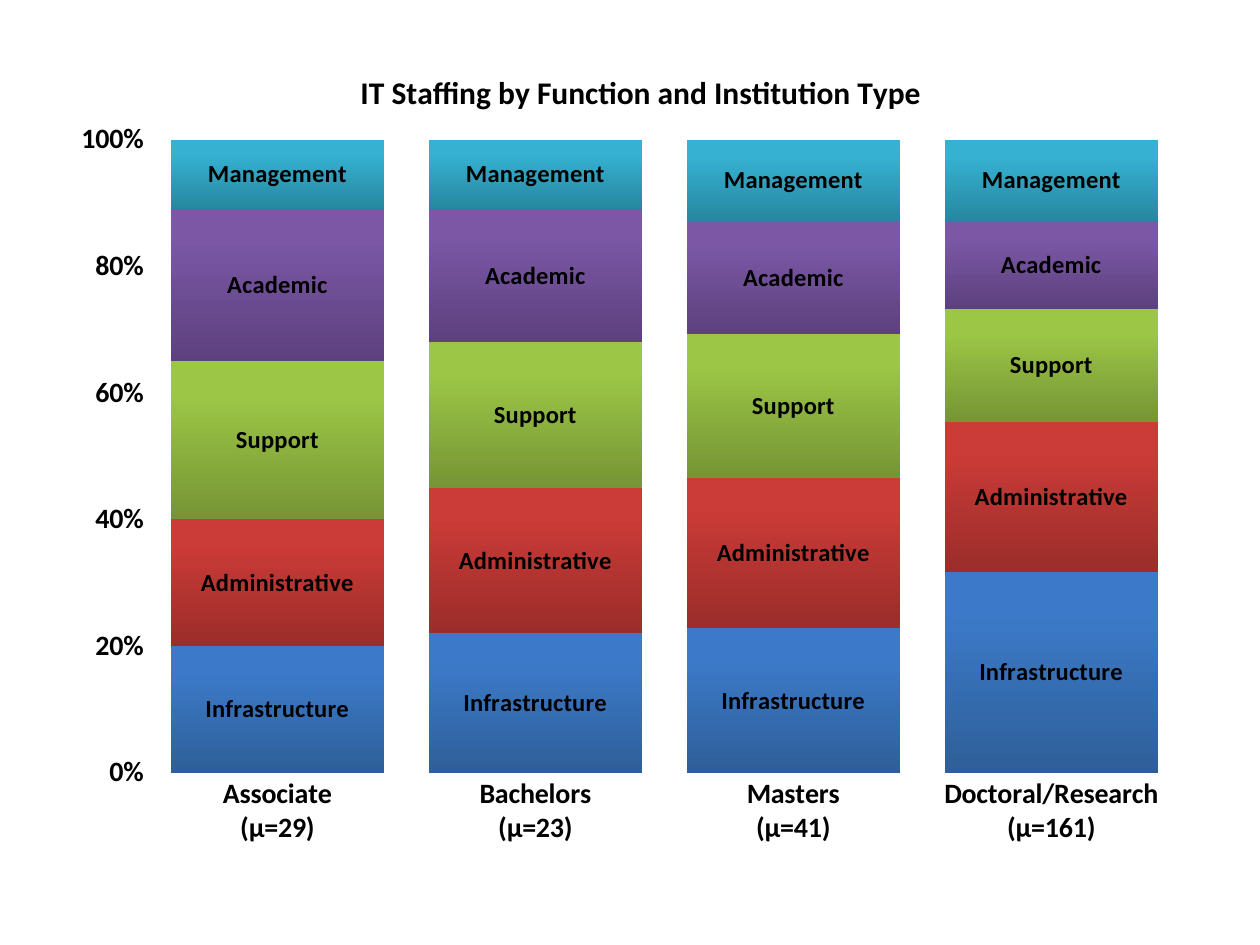
from dataclasses import dataclass

from lxml.etree import SubElement
from pptx import Presentation
from pptx.chart.data import CategoryChartData
from pptx.dml.color import RGBColor
from pptx.enum.chart import XL_CHART_TYPE, XL_LABEL_POSITION, XL_TICK_MARK
from pptx.oxml import parse_xml
from pptx.oxml.ns import nsdecls, qn
from pptx.util import Inches, Pt


@dataclass(frozen=True)
class Theme:
    font: str = "Calibri"
    ink: str = "000000"
    title: int = 18
    axis: int = 16
    label: int = 14


THEME = Theme()
TYPES = ["Associate\n(μ=29)", "Bachelors\n(μ=23)", "Masters\n(μ=41)", "Doctoral/Research\n(μ=161)"]
STAFF = [
    ("Infrastructure", (20, 22, 23, 32), "2E5F99", "3C7AC9"),
    ("Administrative", (20, 23, 24, 24), "9B2D2A", "CB3B37"),
    ("Support", (25, 23, 23, 18), "769535", "9CC746"),
    ("Academic", (24, 21, 18, 14), "5D417E", "7B57A5"),
    ("Management", (11, 11, 13, 13), "2787A0", "36B1D2"),
]


def style(font, size):
    font.name = THEME.font
    font.size = Pt(size)
    font.bold = True
    font.color.rgb = RGBColor.from_string(THEME.ink)


def place(parent, after, **spots):
    for old in parent.findall(qn("c:layout")):
        parent.remove(old)
    layout = parse_xml(f"<c:layout {nsdecls('c')}/>")
    manual = SubElement(layout, qn("c:manualLayout"))
    if "w" in spots:
        SubElement(manual, qn("c:layoutTarget")).set("val", "inner")
    for side in ("x", "y"):
        SubElement(manual, qn(f"c:{side}Mode")).set("val", "edge")
    for key, value in spots.items():
        SubElement(manual, qn(f"c:{key}")).set("val", str(value))
    parent.insert(after, layout)


def add_chart(slide):
    data = CategoryChartData(number_format="0")
    data.categories = TYPES
    for name, values, *_ in STAFF:
        data.add_series(name, values)
    frame = slide.shapes.add_chart(
        XL_CHART_TYPE.COLUMN_STACKED_100,
        Inches(0.45), Inches(0.25), Inches(9.1), Inches(6.61), data,
    )
    return frame.chart


def add_title(chart, text):
    title = chart.chart_title
    para = title.text_frame.paragraphs[0]
    para.text = text
    style(para.font, THEME.title)
    title.include_in_layout = False
    place(title.element, 1, x=0.26, y=0.04)


def set_axis(axis):
    axis.has_major_gridlines = False
    axis.major_tick_mark = XL_TICK_MARK.NONE
    axis.minor_tick_mark = XL_TICK_MARK.NONE
    axis.format.line.fill.background()
    style(axis.tick_labels.font, THEME.axis)


def set_scale(axis):
    axis.minimum_scale = 0
    axis.maximum_scale = 1
    axis.major_unit = 0.2
    axis.tick_labels.number_format = "0%"
    axis.tick_labels.number_format_is_linked = False


def shade(fill, dark, light):
    fill.gradient()
    fill.gradient_angle = 90
    for stop, color, spot in zip(fill.gradient_stops, (dark, light), (0, 0.8)):
        stop.color.rgb = RGBColor.from_string(color)
        stop.position = spot


def set_bars(plot):
    plot.gap_width = 21
    plot.overlap = 100
    plot.vary_by_categories = False
    for series, (*_, dark, light) in zip(plot.series, STAFF):
        shade(series.format.fill, dark, light)
        series.format.line.fill.background()
        labels = series.data_labels
        labels.show_value = False
        labels.show_series_name = True
        labels.position = XL_LABEL_POSITION.CENTER
        style(labels.font, THEME.label)


def main():
    deck = Presentation()
    deck.slide_width, deck.slide_height = Inches(10), Inches(7.5)
    slide = deck.slides.add_slide(deck.slide_layouts[6])
    chart = add_chart(slide)
    chart.has_legend = False
    chart.font.name = THEME.font
    add_title(chart, "IT Staffing by Function and Institution Type")
    set_axis(chart.category_axis)
    set_axis(chart.value_axis)
    set_scale(chart.value_axis)
    set_bars(chart.plots[0])
    area = chart.element.find(".//" + qn("c:plotArea"))
    place(area, 0, x=0.08, y=0.13, w=0.9, h=0.76)
    deck.save("out.pptx")


if __name__ == "__main__":
    main()
